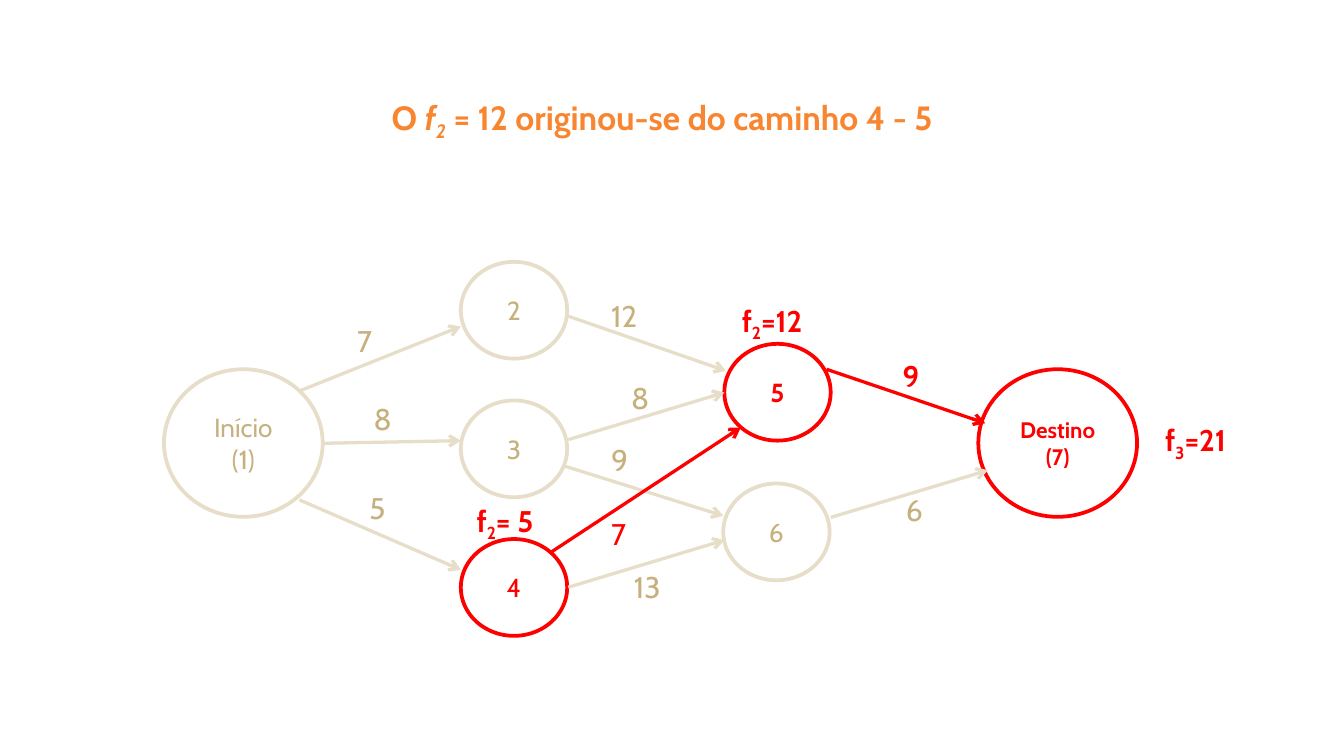
"""Build the slide that traces the shortest path through a network of seven nodes."""
from lxml.etree import SubElement
from pptx import Presentation
from pptx.dml.color import RGBColor
from pptx.enum.shapes import MSO_CONNECTOR as CONN, MSO_SHAPE as SHAPE
from pptx.enum.text import MSO_ANCHOR as ANCHOR, PP_ALIGN as ALIGN
from pptx.oxml.ns import qn
from pptx.util import Cm, Pt

COLORS = {"title": "F88631", "line": "E7DEC9", "text": "C6B07E", "path": "FF0000"}
BIG, SMALL = (3, 2.79), (2.01, 1.83)
COL_X, ROW_Y, ROW_STEP = 8.71, 4.95, 2.62

NODES = [
    (["Início", "(1)"], 3.1, 6.98, BIG, False, {"size": 14}),
    (["Destino", "(7)"], 18.49, 6.98, BIG, True, {"size": 12, "bold": True}),
    (["2"], COL_X, ROW_Y, SMALL, False, {"size": 14}),
    (["3"], COL_X, ROW_Y + ROW_STEP, SMALL, False, {"size": 14}),
    (["4"], COL_X, ROW_Y + 2 * ROW_STEP, SMALL, True, {"size": 14}),
    (["5"], 13.69, 6.5, SMALL, True, {"size": 14, "bold": True}),
    (["6"], 13.67, 9.14, SMALL, False, {"size": 14}),
]
EDGES = [
    (5.66, 7.39, 8.71, 6.17, False),
    (6.07, 8.38, 8.71, 8.33, False),
    (5.66, 9.45, 8.71, 10.77, False),
    (10.74, 8.31, 13.69, 7.42, False),
    (10.67, 8.81, 13.67, 9.75, False),
    (10.74, 11.1, 13.69, 10.21, False),
    (10.72, 5.97, 13.72, 7.01, False),
    (10.41, 10.44, 14, 8.08, True),
    (15.7, 9.78, 18.67, 8.89, False),
    (15.62, 6.98, 18.62, 8, True),
]
COSTS = [
    ("7", 6.5, 5.97, False, False),
    ("8", 6.81, 7.44, False, False),
    ("5", 6.73, 9.14, False, False),
    ("12", 11.3, 5.51, False, False),
    ("8", 11.68, 7.06, False, False),
    ("7", 11.3, 9.63, True, False),
    ("9", 11.3, 8.23, False, False),
    ("9", 16.81, 6.63, True, True),
    ("6", 16.87, 9.17, False, False),
    ("13", 11.73, 10.62, False, False),
]
TOTALS = [("2", "=12", 13.77, 5.59), ("3", "=21", 21.77, 7.85), ("2", "= 5", 8.76, 9.37)]


def rgb(name):
    """Return the named colour."""
    return RGBColor.from_string(COLORS[name])


def add_run(p, text, color, size, sub=False, **fmt):
    """Append a formatted run, lowered when it is a subscript."""
    r = p.add_run()
    r.text = text
    r.font.color.rgb = rgb(color)
    for key, value in {"name": "Cabin", "size": Pt(size), **fmt}.items():
        setattr(r.font, key, value)
    if sub:
        r.font._element.set("baseline", "-25000")


def add_node(s, lines, x, y, size, on_path, fmt):
    """Draw a circled node with its centred name."""
    sp = s.shapes.add_shape(SHAPE.OVAL, *map(Cm, (x, y, *size)))
    sp.shadow.inherit = False
    sp.fill.background()
    sp.line.color.rgb = rgb("path" if on_path else "line")
    sp.line.width = Pt(2)
    tf = sp.text_frame
    tf.vertical_anchor = ANCHOR.MIDDLE
    for i, text in enumerate(lines):
        p = tf.add_paragraph() if i else tf.paragraphs[0]
        p.alignment = ALIGN.CENTER
        add_run(p, text, "path" if on_path else "text", **fmt)


def add_edge(s, x1, y1, x2, y2, on_path):
    """Draw an arrow between two nodes."""
    c = s.shapes.add_connector(CONN.STRAIGHT, *map(Cm, (x1, y1, x2, y2)))
    c.line.color.rgb = rgb("path" if on_path else "line")
    c.line.width = Pt(1.75)
    SubElement(c.line._get_or_add_ln(), qn("a:tailEnd"), type="arrow")
    SubElement(c._element.spPr, qn("a:effectLst"))


def add_text(s, x, y, w, h, runs, color, size, align=ALIGN.LEFT):
    """Add a one-line text box made of (text, format) runs."""
    tf = s.shapes.add_textbox(*map(Cm, (x, y, w, h))).text_frame
    tf.word_wrap = True
    p = tf.paragraphs[0]
    p.alignment = align
    for text, fmt in runs:
        add_run(p, text, color, size, **fmt)


def main():
    """Assemble and save the slide."""
    prs = Presentation()
    prs.slide_width, prs.slide_height = Cm(25.4), Cm(14.29)
    s = prs.slides.add_slide(prs.slide_layouts[6])
    for node in NODES:
        add_node(s, *node)
    for edge in EDGES:
        add_edge(s, *edge)
    for text, x, y, on_path, bold in COSTS:
        color = "path" if on_path else "text"
        add_text(s, x, y, 0.69 * len(text), 0.94, [(text, {"bold": bold})], color, 16)
    bold = {"bold": True}
    italic = {"bold": True, "italic": True}
    title = [("O ", bold), ("f", italic), ("2", {**italic, "sub": True}),
             (" = 12 originou-se do caminho 4 - 5", bold)]
    add_text(s, 3.51, 1.7, 18.01, 1.02, title, "title", 18, ALIGN.CENTER)
    for index, value, x, y in TOTALS:
        runs = [("f", bold), (index, {**bold, "sub": True}), (value, bold)]
        add_text(s, x, y, 2.34, 0.94, runs, "path", 16)
    prs.save("out.pptx")


if __name__ == "__main__":
    main()
